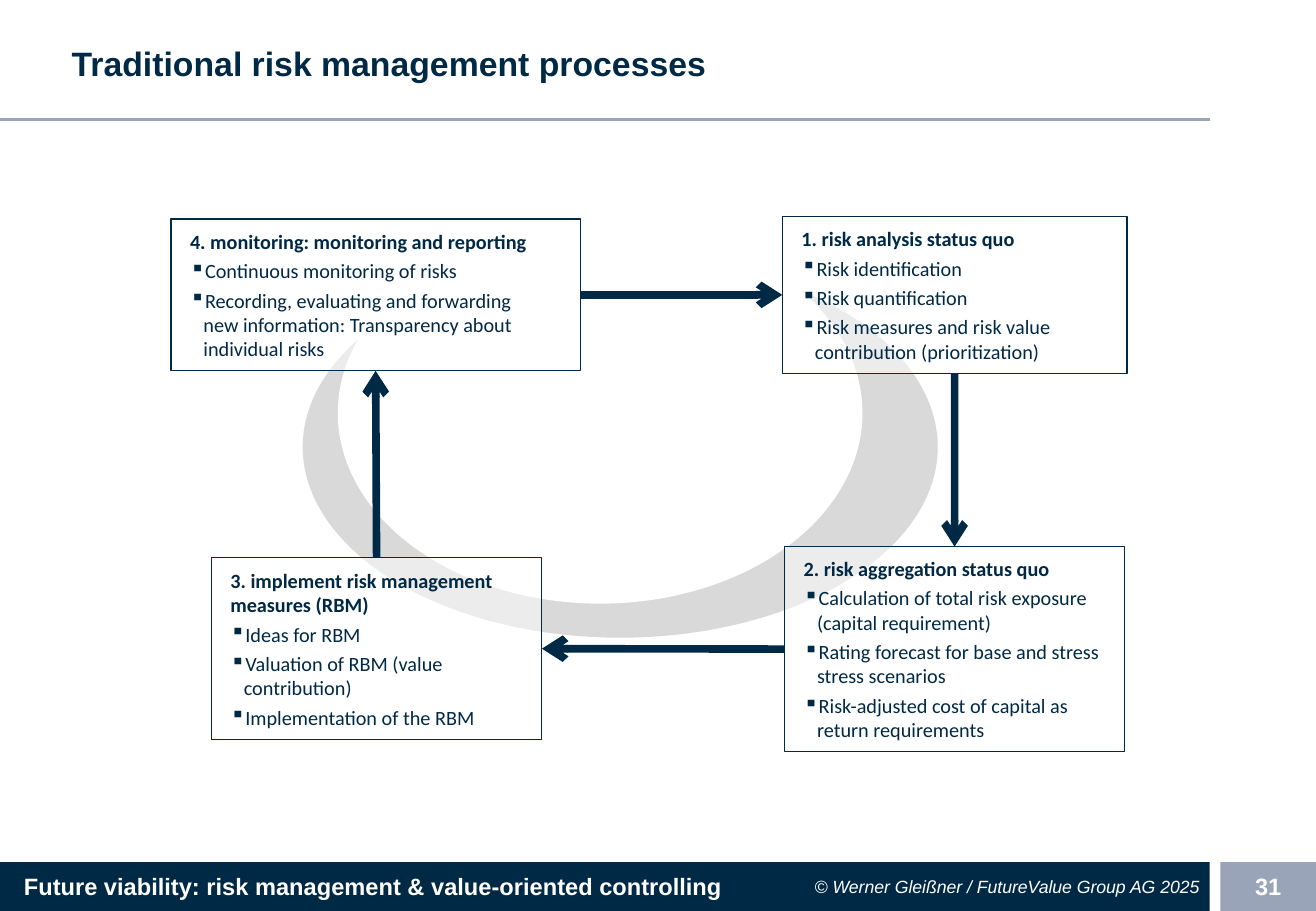
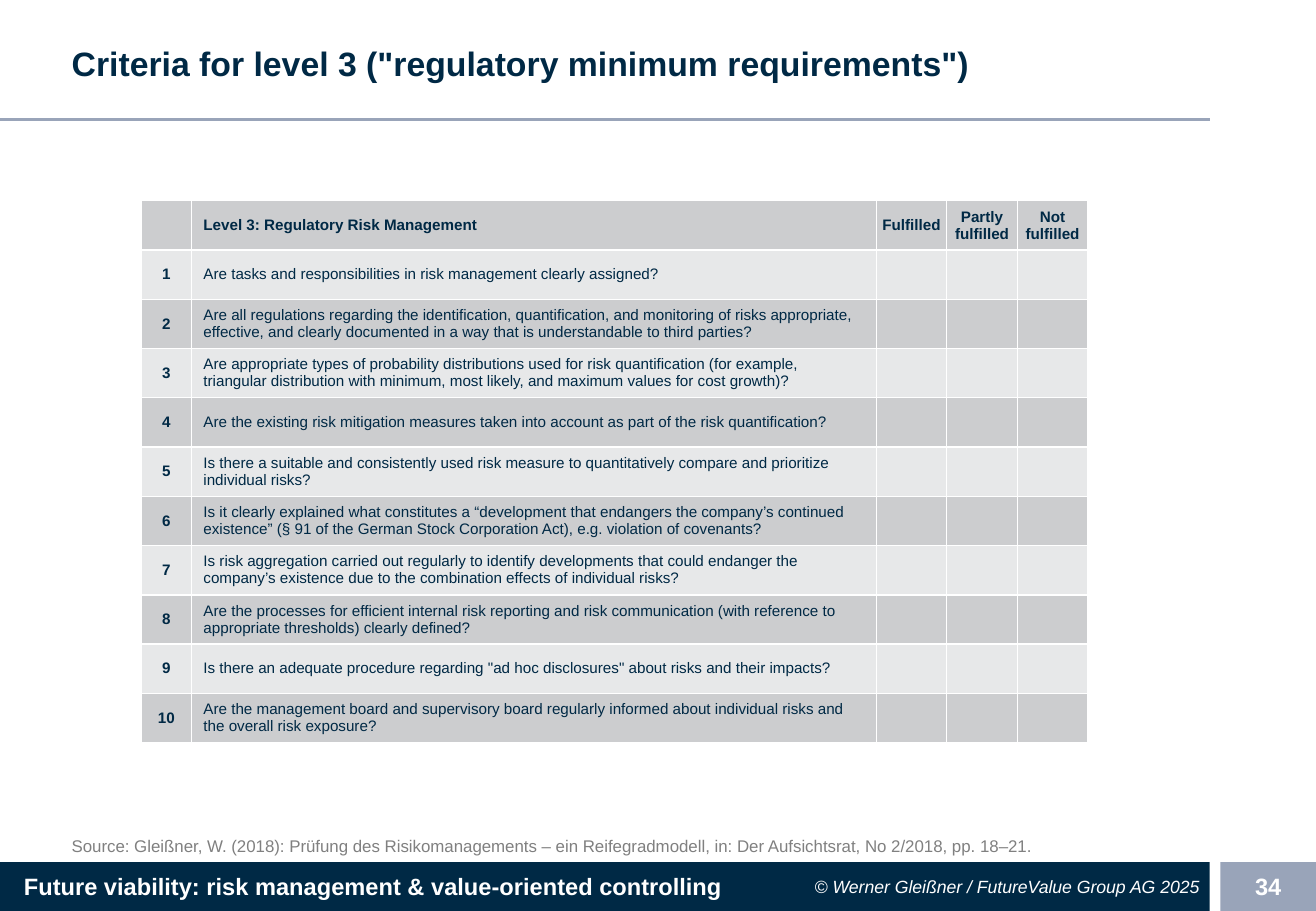
from lxml.etree import SubElement
from pptx import Presentation
from pptx.dml.color import RGBColor
from pptx.enum.shapes import MSO_CONNECTOR as Connector, MSO_SHAPE as Preset
from pptx.enum.text import MSO_ANCHOR as Anchor, PP_ALIGN as Align
from pptx.oxml.ns import qn
from pptx.util import Pt

NAVY, BLUE_GREY, WHITE = "002945", "99A4B9", "FFFFFF"
RING_GREY, SOURCE_GREY = "D9D9D9", "808080"
BAND_FILLS = ("CCCDCF", "E7E8E9")
BAND_WIDTH, FOOTER_TOP, FOOTER_HEIGHT = 717, 511, 29
TEXT_LEFT, TEXT_WIDTH = 36.7, 680
INSETS = (5.76, 2.88, 5.76, 2.88)
TOP, LEFT, BOTTOM, RIGHT = range(4)

FOOTER = "Future viability: risk management & value-oriented controlling"
COPYRIGHT = "© Werner Gleißner / FutureValue Group AG 2025"

PROCESS_TITLE = "Traditional risk management processes"
RING = [
    ((179.4, 152, 376.4, 226), RING_GREY),
    ((200.2, 131.8, 311, 226), WHITE),
]
STEPS = {
    "implement": ((125.2, 330.5, 196, 108), "3. implement risk management measures (RBM)", [
        "Ideas for RBM",
        "Valuation of RBM (value\vcontribution)",
        "Implementation of the RBM",
    ]),
    "analysis": ((463.7, 128.3, 204.3, 93), "1. risk analysis status quo", [
        "Risk identification",
        "Risk quantification",
        "Risk measures and risk value\vcontribution (prioritization)",
    ]),
    "aggregation": ((465, 324, 201.6, 121.5), "2. risk aggregation status quo", [
        "Calculation of total risk exposure\v(capital requirement)",
        "Rating forecast for base and stress\vstress scenarios",
        "Risk-adjusted cost of capital as\vreturn requirements",
    ]),
    "monitoring": ((101.3, 129.8, 242.7, 90), "4. monitoring: monitoring and reporting", [
        "Continuous monitoring of risks",
        "Recording, evaluating and forwarding\vnew information: Transparency about\vindividual risks",
    ]),
}
ARROWS = [
    ("monitoring", RIGHT, "analysis", LEFT),
    ("implement", TOP, "monitoring", BOTTOM),
    ("analysis", BOTTOM, "aggregation", TOP),
    ("aggregation", LEFT, "implement", RIGHT),
]

CRITERIA_TITLE = 'Criteria for level 3 ("regulatory minimum requirements")'
CRITERIA_HEADER = ["", "Level 3: Regulatory Risk Management", "Fulfilled", "Partly fulfilled", "Not fulfilled"]
CRITERIA = [
    "Are tasks and responsibilities in risk management clearly assigned?",
    "Are all regulations regarding the identification, quantification, and monitoring of risks appropriate, effective, and clearly documented in a way that is understandable to third parties?",
    "Are appropriate types of probability distributions used for risk quantification (for example, triangular distribution with minimum, most likely, and maximum values for cost growth)?",
    "Are the existing risk mitigation measures taken into account as part of the risk quantification?",
    "Is there a suitable and consistently used risk measure to quantitatively compare and prioritize individual risks?",
    "Is it clearly explained what constitutes a “development that endangers the company’s continued existence” (§ 91 of the German Stock Corporation Act), e.g. violation of covenants?",
    "Is risk aggregation carried out regularly to identify developments that could endanger the company’s existence due to the combination effects of individual risks?",
    "Are the processes for efficient internal risk reporting and risk communication (with reference to appropriate thresholds) clearly defined?",
    'Is there an adequate procedure regarding "ad hoc disclosures" about risks and their impacts?',
    "Are the management board and supervisory board regularly informed about individual risks and the overall risk exposure?",
]
SOURCE = "Source: Gleißner, W. (2018): Prüfung des Risikomanagements – ein Reifegradmodell, in: Der Aufsichtsrat, No 2/2018, pp. 18–21."
TABLE_LEFT, TABLE_TOP, ROW_HEIGHT = 83.8, 119, 29.2
COLUMN_WIDTHS = [29.6, 406, 41.8, 41.8, 41.8]


def color(value):
    return RGBColor.from_string(value)


def points(box):
    return [Pt(length) for length in box]


def style(paragraph, size, ink, font="Arial", bold=False, italic=False, align=Align.LEFT):
    paragraph.alignment = align
    for run in paragraph.runs:
        run.font.name = font
        run.font.size = Pt(size)
        run.font.bold = bold
        run.font.italic = italic
        run.font.color.rgb = color(ink)


def set_frame(frame, anchor=Anchor.MIDDLE, insets=INSETS, wrap=True):
    frame.word_wrap = wrap
    frame.vertical_anchor = anchor
    frame.margin_left, frame.margin_top, frame.margin_right, frame.margin_bottom = points(insets)


def add_text(slide, box, text, size, ink, anchor=Anchor.MIDDLE, **looks):
    frame = slide.shapes.add_textbox(*points(box)).text_frame
    set_frame(frame, anchor)
    frame.text = text
    style(frame.paragraphs[0], size, ink, **looks)


def add_filled(slide, preset, box, fill, line=None):
    shape = slide.shapes.add_shape(preset, *points(box))
    shape.shadow.inherit = False
    shape.fill.solid()
    shape.fill.fore_color.rgb = color(fill)
    if line:
        shape.line.color.rgb = color(line)
        shape.line.width = Pt(0.75)
    else:
        shape.line.fill.background()
    return shape


def add_line(slide, start, end, ink, width):
    line = slide.shapes.add_connector(Connector.STRAIGHT, *points(start + end))
    line.line.color.rgb = color(ink)
    line.line.width = Pt(width)
    SubElement(line._element.spPr, qn("a:effectLst"))
    return line


def add_footer_band(slide, left, width, fill, text, insets, align, wrap):
    band = add_filled(slide, Preset.RECTANGLE, (left, FOOTER_TOP, width, FOOTER_HEIGHT), fill)
    set_frame(band.text_frame, insets=insets, wrap=wrap)
    band.text_frame.text = text
    style(band.text_frame.paragraphs[0], 14, WHITE, bold=True, align=align)


def add_base_slide(presentation, title, number):
    slide = presentation.slides.add_slide(presentation.slide_layouts[6])
    add_footer_band(slide, 0, BAND_WIDTH, NAVY, FOOTER, (14.2, 2.88, 5.76, 2.88), Align.LEFT, False)
    add_footer_band(slide, 723.4, 56.6, BLUE_GREY, number, INSETS, Align.CENTER, True)
    add_text(slide, (405, FOOTER_TOP, 312, FOOTER_HEIGHT), COPYRIGHT, 10.5, WHITE, italic=True, align=Align.RIGHT)
    add_line(slide, (0, 70.7), (BAND_WIDTH, 70.7), BLUE_GREY, 1.5)
    add_text(slide, (TEXT_LEFT, 11.7, TEXT_WIDTH, 51), title, 20, NAVY, bold=True)
    return slide


def add_bullet(paragraph):
    properties = paragraph._p.get_or_add_pPr()
    properties.set("marL", str(Pt(8)))
    properties.set("indent", str(-Pt(8)))
    SubElement(properties, qn("a:buChar"), char="▪")


def add_step(slide, box, heading, bullets):
    shape = add_filled(slide, Preset.RECTANGLE, box, WHITE, NAVY)
    fill_color = shape._element.spPr.find(qn("a:solidFill"))[0]
    SubElement(fill_color, qn("a:alpha"), val="50000")
    frame = shape.text_frame
    set_frame(frame, insets=(11.34, 5.76, 5.76, 5.76))
    for index, text in enumerate([heading] + bullets):
        paragraph = frame.add_paragraph() if index else frame.paragraphs[0]
        paragraph.text = text
        if index:
            add_bullet(paragraph)
        paragraph.space_after = Pt(3)
        style(paragraph, 12, NAVY, font="Calibri", bold=index == 0)
    return shape


def add_process_slide(presentation):
    slide = add_base_slide(presentation, PROCESS_TITLE, "31")
    for box, fill in RING:
        add_filled(slide, Preset.OVAL, box, fill)
    steps = {name: add_step(slide, *step) for name, step in STEPS.items()}
    for origin, origin_side, target, target_side in ARROWS:
        arrow = add_line(slide, (0, 0), (0, 0), NAVY, 4.5)
        arrow.begin_connect(steps[origin], origin_side)
        arrow.end_connect(steps[target], target_side)
        SubElement(arrow.line._get_or_add_ln(), qn("a:tailEnd"), type="arrow")


def set_borders(cell):
    properties = cell._tc.get_or_add_tcPr()
    for index, side in enumerate(("lnL", "lnR", "lnT", "lnB")):
        border = SubElement(properties, qn(f"a:{side}"), w=str(Pt(1)))
        SubElement(SubElement(border, qn("a:solidFill")), qn("a:srgbClr"), val=WHITE)
        properties.insert(index, border)


def add_criteria_slide(presentation):
    slide = add_base_slide(presentation, CRITERIA_TITLE, "34")
    add_text(slide, (TEXT_LEFT, 425.5, TEXT_WIDTH, 85), SOURCE, 10, SOURCE_GREY, anchor=Anchor.BOTTOM)
    rows = [CRITERIA_HEADER] + [[str(number), text, "", "", ""] for number, text in enumerate(CRITERIA, 1)]
    box = (TABLE_LEFT, TABLE_TOP, sum(COLUMN_WIDTHS), ROW_HEIGHT * len(rows))
    table = slide.shapes.add_table(len(rows), len(COLUMN_WIDTHS), *points(box)).table
    for column, width in zip(table.columns, COLUMN_WIDTHS):
        column.width = Pt(width)
    for row_index, texts in enumerate(rows):
        table.rows[row_index].height = Pt(ROW_HEIGHT)
        for column_index, text in enumerate(texts):
            cell = table.cell(row_index, column_index)
            cell.fill.solid()
            cell.fill.fore_color.rgb = color(BAND_FILLS[row_index % 2])
            set_borders(cell)
            cell.vertical_anchor = Anchor.MIDDLE
            cell.margin_top = cell.margin_bottom = Pt(2)
            if column_index > 1:
                cell.margin_left = cell.margin_right = Pt(0)
            cell.text = text
            is_question = column_index == 1
            style(cell.text_frame.paragraphs[0], 9, NAVY,
                  bold=row_index == 0 or not is_question,
                  align=Align.LEFT if is_question else Align.CENTER)


def main():
    presentation = Presentation()
    presentation.slide_width, presentation.slide_height = Pt(780), Pt(540)
    add_process_slide(presentation)
    add_criteria_slide(presentation)
    presentation.save("out.pptx")


if __name__ == "__main__":
    main()
